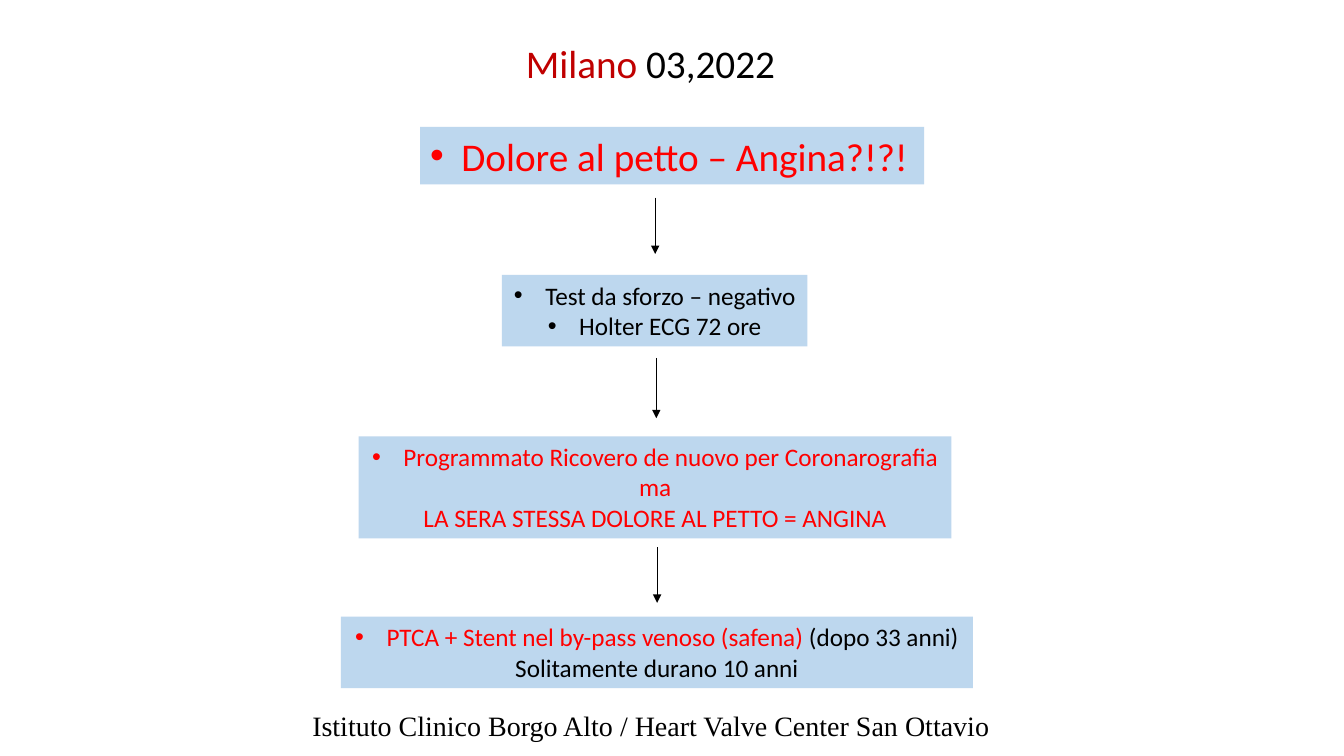
import pptx
import pptx.util
import pptx.dml.color
import pptx.enum.shapes
import pptx.enum.text
import pptx.oxml
import pptx.oxml.ns

Cm = pptx.util.Cm
Pt = pptx.util.Pt
RED = "FF0000"
DARK_RED = "C00000"
BLACK = "000000"
LIGHT_BLUE = "BDD7EE"


def rgb(value):
    return pptx.dml.color.RGBColor.from_string(value)


def add_xml(parent, tag, **attributes):
    element = pptx.oxml.parse_xml(f"<{tag} {pptx.oxml.ns.nsdecls('a')}/>")
    for name, value in attributes.items():
        element.set(name, value)
    parent.append(element)


class FlowSlide:
    font = "Calibri"
    indent = Cm(0.79)

    def __init__(self, prs):
        self.s = prs.slides.add_slide(prs.slide_layouts[5])

    def fill_text(self, sp, paragraphs, size, align, font=None):
        tf = sp.text_frame
        tf.word_wrap = True
        tf.auto_size = pptx.enum.text.MSO_AUTO_SIZE.NONE
        tf.vertical_anchor = pptx.enum.text.MSO_ANCHOR.TOP
        tf.text = "\n".join(runs[0][0] for bullet, runs in paragraphs)
        for p, (bullet, runs) in zip(tf.paragraphs, paragraphs):
            p.alignment = align
            for text, color in runs[1:]:
                p.add_run().text = text
            for r, (text, color) in zip(p.runs, runs):
                r.font.name = font or self.font
                r.font.size = Pt(size)
                r.font.color.rgb = rgb(color)
            if bullet:
                pPr = p._p.get_or_add_pPr()
                pPr.set("marL", str(self.indent))
                pPr.set("indent", str(-self.indent))
                add_xml(pPr, "a:buFont", typeface="Arial")
                add_xml(pPr, "a:buChar", char="•")

    def title(self, left, top, width, height, runs):
        sp = self.s.shapes.title
        sp.left, sp.top, sp.width, sp.height = map(Cm, (left, top, width, height))
        self.fill_text(sp, [(False, runs)], 28, pptx.enum.text.PP_ALIGN.LEFT)

    def label(self, left, top, width, height, text):
        sp = self.s.shapes.add_textbox(*map(Cm, (left, top, width, height)))
        self.fill_text(sp, [(False, [(text, BLACK)])], 20,
                       pptx.enum.text.PP_ALIGN.LEFT, "Times New Roman")

    def box(self, left, top, width, height, paragraphs, size=18,
            align=pptx.enum.text.PP_ALIGN.CENTER):
        sp = self.s.shapes.add_shape(
            pptx.enum.shapes.MSO_SHAPE.RECTANGLE,
            *map(Cm, (left, top, width, height)))
        sp.shadow.inherit = False
        sp.fill.solid()
        sp.fill.fore_color.rgb = rgb(LIGHT_BLUE)
        sp.line.fill.background()
        self.fill_text(sp, paragraphs, size, align)

    def arrow(self, x, top, bottom):
        line = self.s.shapes.add_connector(
            pptx.enum.shapes.MSO_CONNECTOR.STRAIGHT,
            *map(Cm, (x, top, x, bottom)))
        line.line.color.rgb = rgb(BLACK)
        line.line.width = Pt(0.5)
        add_xml(line.line._get_or_add_ln(), "a:tailEnd", type="triangle")
        add_xml(line._element.spPr, "a:effectLst")


def main():
    prs = pptx.Presentation()
    prs.slide_width, prs.slide_height = Cm(33.87), Cm(19.05)
    flow = FlowSlide(prs)

    flow.title(13, 0.86, 7.09, 1.45, [("Milano", DARK_RED), (" 03,2022", BLACK)])
    flow.label(7.62, 17.73, 17.86, 1.12,
               "Istituto Clinico Borgo Alto / Heart Valve Center San Ottavio")

    flow.box(10.59, 3.2, 12.7, 1.45,
             [(True, [("Dolore al petto – Angina?!?!", RED)])],
             28, pptx.enum.text.PP_ALIGN.LEFT)
    flow.box(12.65, 6.93, 7.7, 1.8, [
        (True, [("Test da sforzo – negativo", BLACK)]),
        (True, [("Holter ECG 72 ore", BLACK)]),
    ])
    flow.box(9.04, 11, 14.94, 2.57, [
        (True, [("Programmato Ricovero de nuovo per Coronarografia", RED)]),
        (False, [("ma", RED)]),
        (False, [("LA SERA STESSA DOLORE AL PETTO = ANGINA", RED)]),
    ])
    flow.box(8.59, 15.54, 15.93, 1.8, [
        (True, [("PTCA + Stent nel by-pass venoso (safena) ", RED),
                ("(dopo 33 anni)", BLACK)]),
        (False, [("Solitamente durano 10 anni", BLACK)]),
    ])

    for x, top, bottom in ((16.51, 4.98, 6.4), (16.54, 9.02, 10.54),
                           (16.56, 13.79, 15.19)):
        flow.arrow(x, top, bottom)

    prs.save("out.pptx")


if __name__ == "__main__":
    main()
